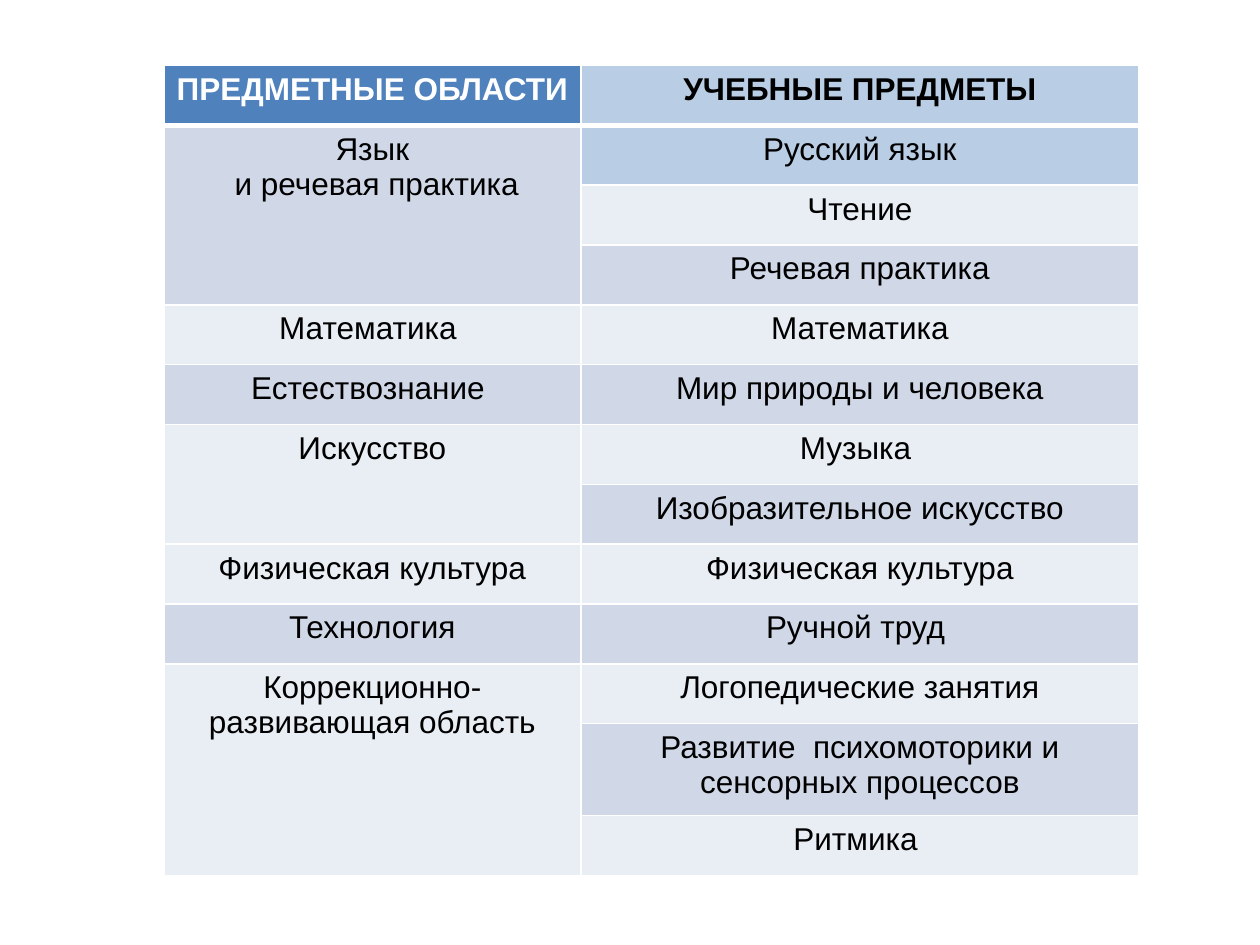
"""Build a slide with a table of subject areas and their school subjects."""
from dataclasses import dataclass

from lxml.etree import SubElement
from pptx import Presentation
from pptx.dml.color import RGBColor
from pptx.enum.text import PP_ALIGN
from pptx.oxml.ns import qn
from pptx.table import _Cell
from pptx.util import Inches, Pt

WHITE = RGBColor(0xFF, 0xFF, 0xFF)
BLACK = RGBColor(0x00, 0x00, 0x00)
BLUE = RGBColor(0x4F, 0x81, 0xBD)
SKY = RGBColor(0xB9, 0xCD, 0xE5)
BANDS = (RGBColor(0xE9, 0xED, 0xF4), RGBColor(0xD0, 0xD8, 0xE8))

TABLE_HEIGHT = 6.43
TALL_ROW = 11
TALL_HEIGHT = 0.73


@dataclass(frozen=True)
class Area:
    lines: tuple[str, ...]
    subjects: tuple[str, ...]


AREAS = (
    Area(("Язык", " и речевая практика"), ("Русский язык", "Чтение", "Речевая практика")),
    Area(("Математика ",), ("Математика",)),
    Area(("Естествознание ",), ("Мир природы и человека",)),
    Area(("Искусство",), ("Музыка ", "Изобразительное искусство")),
    Area(("Физическая культура",), ("Физическая культура",)),
    Area(("Технология",), ("Ручной труд ",)),
    Area(
        ("Коррекционно-развивающая область",),
        ("Логопедические занятия", "Развитие  психомоторики и сенсорных процессов", "Ритмика "),
    ),
)


def set_borders(cell: _Cell, bottom: float) -> None:
    properties = cell._tc.get_or_add_tcPr()
    widths = {"a:lnL": 1, "a:lnR": 1, "a:lnT": 1, "a:lnB": bottom}
    for position, (tag, width) in enumerate(widths.items()):
        line = SubElement(properties, qn(tag), w=str(Pt(width)))
        fill = SubElement(line, qn("a:solidFill"))
        SubElement(fill, qn("a:srgbClr"), val=str(WHITE))
        properties.insert(position, line)


def style_cell(cell: _Cell, color: RGBColor, bottom: float = 1) -> None:
    cell.fill.solid()
    cell.fill.fore_color.rgb = color
    set_borders(cell, bottom)


def write_cell(
    cell: _Cell, lines: tuple[str, ...], color: RGBColor = BLACK, bold: bool = False
) -> None:
    frame = cell.text_frame
    for index, line in enumerate(lines):
        para = frame.add_paragraph() if index else frame.paragraphs[0]
        para.alignment = PP_ALIGN.CENTER
        span = para.add_run()
        span.text = line
        span.font.name = "Arial"
        span.font.size = Pt(18)
        span.font.bold = bold
        span.font.color.rgb = color


def main() -> None:
    deck = Presentation()
    deck.slide_width, deck.slide_height = Inches(10), Inches(7.5)
    page = deck.slides.add_slide(deck.slide_layouts[6])

    row_count = 1 + sum(len(area.subjects) for area in AREAS)
    table = page.shapes.add_table(
        row_count, 2, Inches(1.3), Inches(0.52), Inches(7.74), Inches(TABLE_HEIGHT)
    ).table
    for column, width in zip(table.columns, (3.31, 4.43)):
        column.width = Inches(width)
    row_height = (TABLE_HEIGHT - TALL_HEIGHT) / (row_count - 1)
    for index, row in enumerate(table.rows):
        row.height = Inches(TALL_HEIGHT if index == TALL_ROW else row_height)

    headings = (("ПРЕДМЕТНЫЕ ОБЛАСТИ", BLUE, WHITE), ("УЧЕБНЫЕ ПРЕДМЕТЫ", SKY, BLACK))
    for column, (heading, fill, color) in enumerate(headings):
        style_cell(table.cell(0, column), fill, bottom=3)
        write_cell(table.cell(0, column), (heading,), color, bold=True)

    first = 1
    for area in AREAS:
        last = first + len(area.subjects) - 1
        for row, subject in enumerate(area.subjects, first):
            style_cell(table.cell(row, 0), BANDS[first % 2])
            style_cell(table.cell(row, 1), SKY if row == 1 else BANDS[row % 2])
            write_cell(table.cell(row, 1), (subject,))
        if last > first:
            table.cell(first, 0).merge(table.cell(last, 0))
        write_cell(table.cell(first, 0), area.lines)
        first = last + 1

    deck.save("out.pptx")


if __name__ == "__main__":
    main()
